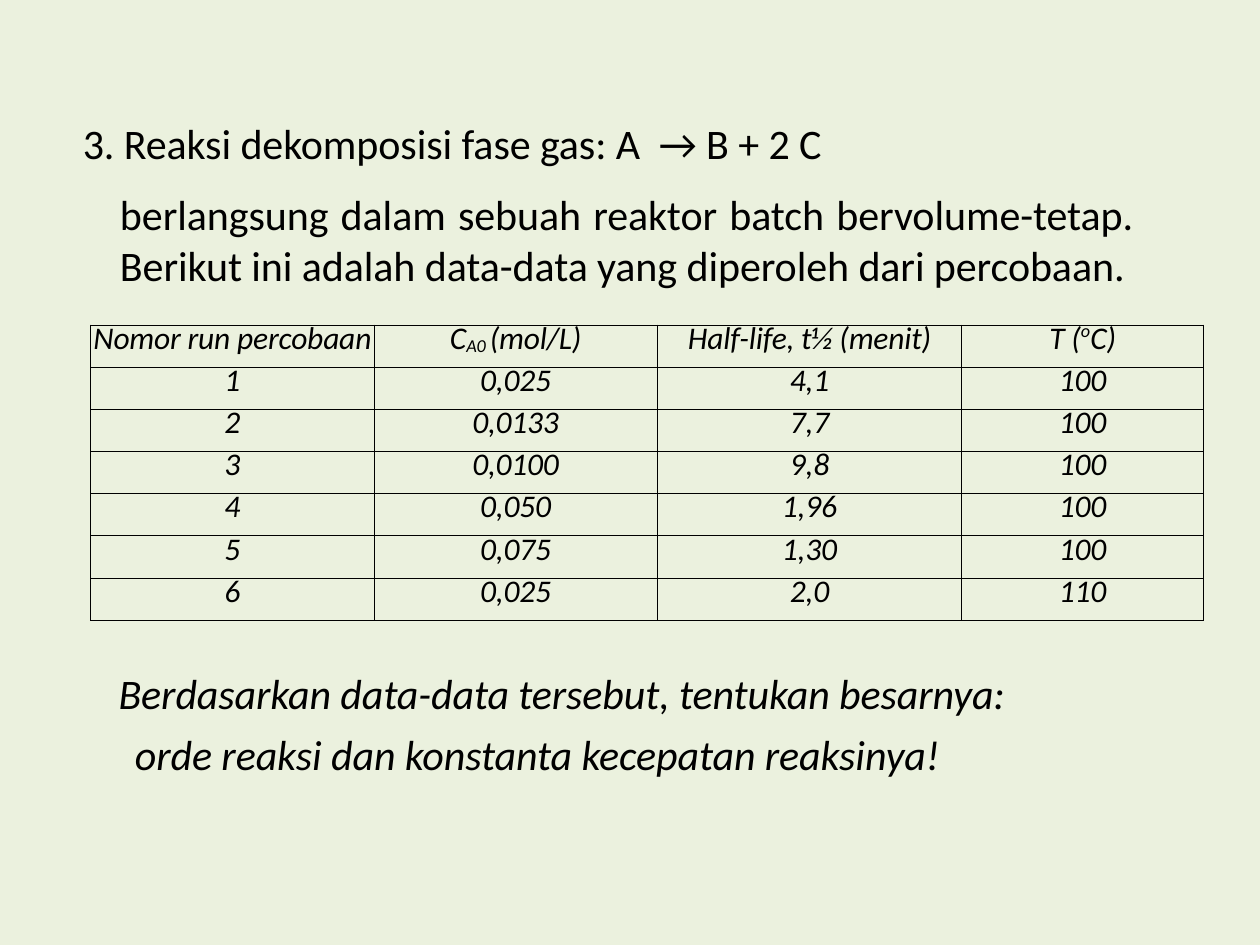
from lxml import etree
from pptx import Presentation
from pptx.dml.color import RGBColor
from pptx.enum import text
from pptx.oxml import ns
from pptx.util import Cm, Pt

BACKGROUND = RGBColor(0xEB, 0xF1, 0xDE)
BLACK = RGBColor(0, 0, 0)
FONT = "Calibri"
CENTER, JUSTIFY = text.PP_ALIGN.CENTER, text.PP_ALIGN.JUSTIFY

# Each text is a list of (words, baseline shift in percent).
PROBLEM = [
    ([("3. Reaksi dekomposisi fase gas: A  → B + 2 C", 0)],
     dict(indent=0.25, after=6)),
    ([("berlangsung dalam sebuah reaktor batch bervolume-tetap. "
       "Berikut ini adalah data-data yang diperoleh dari percobaan.", 0)],
     dict(indent=1, right=1.14, before=6, after=6, align=JUSTIFY)),
]
QUESTION = [
    ([("Berdasarkan data-data tersebut, tentukan besarnya:", 0)],
     dict(indent=0.03, italic=True)),
    ([("orde reaksi dan konstanta kecepatan reaksinya!", 0)],
     dict(indent=0.36, before=6, italic=True)),
]
HEADERS = [
    [("Nomor run percobaan", 0)],
    [("C", 0), ("A0 ", -10), ("(mol/L)", 0)],
    [("Half-life, t½ (menit)", 0)],
    [("T (", 0), ("o", 38), ("C)", 0)],
]
RUNS = [
    ("1", "0,025", "4,1", "100"),
    ("2", "0,0133", "7,7", "100"),
    ("3", "0,0100", "9,8", "100"),
    ("4", "0,050", "1,96", "100"),
    ("5", "0,075", "1,30", "100"),
    ("6", "0,025", "2,0", "110"),
]
COLUMN_WIDTHS = [5.71, 5.71, 6.14, 4.87]
ROW_HEIGHT = 0.85


def write(paragraph, pieces, size=24, italic=False, align=None, indent=0,
          right=0, before=0, after=0, line=None, spacing=-0.05):
    properties = paragraph._p.get_or_add_pPr()
    properties.set("marL", str(Cm(indent)))
    properties.set("marR", str(Cm(right)))
    properties.set("indent", "0")
    paragraph.alignment = align
    paragraph.space_before, paragraph.space_after = Pt(before), Pt(after)
    if line:
        paragraph.line_spacing = Pt(line)
    for words, baseline in pieces:
        run = paragraph.add_run()
        run.text = words
        run.font.name, run.font.size = FONT, Pt(size)
        run.font.italic = italic
        run.font.color.rgb = BLACK
        run_properties = run._r.get_or_add_rPr()
        run_properties.set("spc", str(round(spacing * 100)))
        if baseline:
            run_properties.set("baseline", str(baseline * 1000))


def add_text(slide, paragraphs, left, top, width, height):
    box = slide.shapes.add_textbox(Cm(left), Cm(top), Cm(width), Cm(height))
    frame = box.text_frame
    frame.word_wrap = True
    frame.auto_size = text.MSO_AUTO_SIZE.SHAPE_TO_FIT_TEXT
    for index, (pieces, style) in enumerate(paragraphs):
        paragraph = frame.add_paragraph() if index else frame.paragraphs[0]
        write(paragraph, pieces, **style)


def set_borders(cell):
    properties = cell._tc.get_or_add_tcPr()
    for position, side in enumerate(("lnL", "lnR", "lnT", "lnB")):
        border = etree.Element(ns.qn(f"a:{side}"), w=str(Pt(0.5)))
        fill = etree.SubElement(border, ns.qn("a:solidFill"))
        etree.SubElement(fill, ns.qn("a:srgbClr"), val=str(BLACK))
        properties.insert(position, border)


def add_data_table(slide, left, top):
    rows = [HEADERS] + [[[(value, 0)] for value in run] for run in RUNS]
    table = slide.shapes.add_table(
        len(rows), len(COLUMN_WIDTHS), Cm(left), Cm(top),
        Cm(sum(COLUMN_WIDTHS)), Cm(ROW_HEIGHT * len(rows))).table
    table.first_row = table.horz_banding = False
    for column, width in zip(table.columns, COLUMN_WIDTHS):
        column.width = Cm(width)
    for row_index, row in enumerate(rows):
        for column_index, pieces in enumerate(row):
            cell = table.cell(row_index, column_index)
            cell.margin_left = cell.margin_right = 0
            cell.margin_top = cell.margin_bottom = 0
            cell.vertical_anchor = text.MSO_ANCHOR.MIDDLE
            cell.fill.background()
            set_borders(cell)
            write(cell.text_frame.paragraphs[0], pieces, size=18, italic=True,
                  align=CENTER, line=13.3, spacing=-0.1)


def main():
    presentation = Presentation()
    presentation.slide_width, presentation.slide_height = Cm(25.4), Cm(19.05)
    slide = presentation.slides.add_slide(presentation.slide_layouts[6])
    slide.background.fill.solid()
    slide.background.fill.fore_color.rgb = BACKGROUND
    add_text(slide, PROBLEM, 1.17, 2.24, 23.06, 3.76)
    add_data_table(slide, 1.83, 6.55)
    add_text(slide, QUESTION, 2.11, 13.34, 23.06, 2.51)
    presentation.save("out.pptx")


if __name__ == "__main__":
    main()
